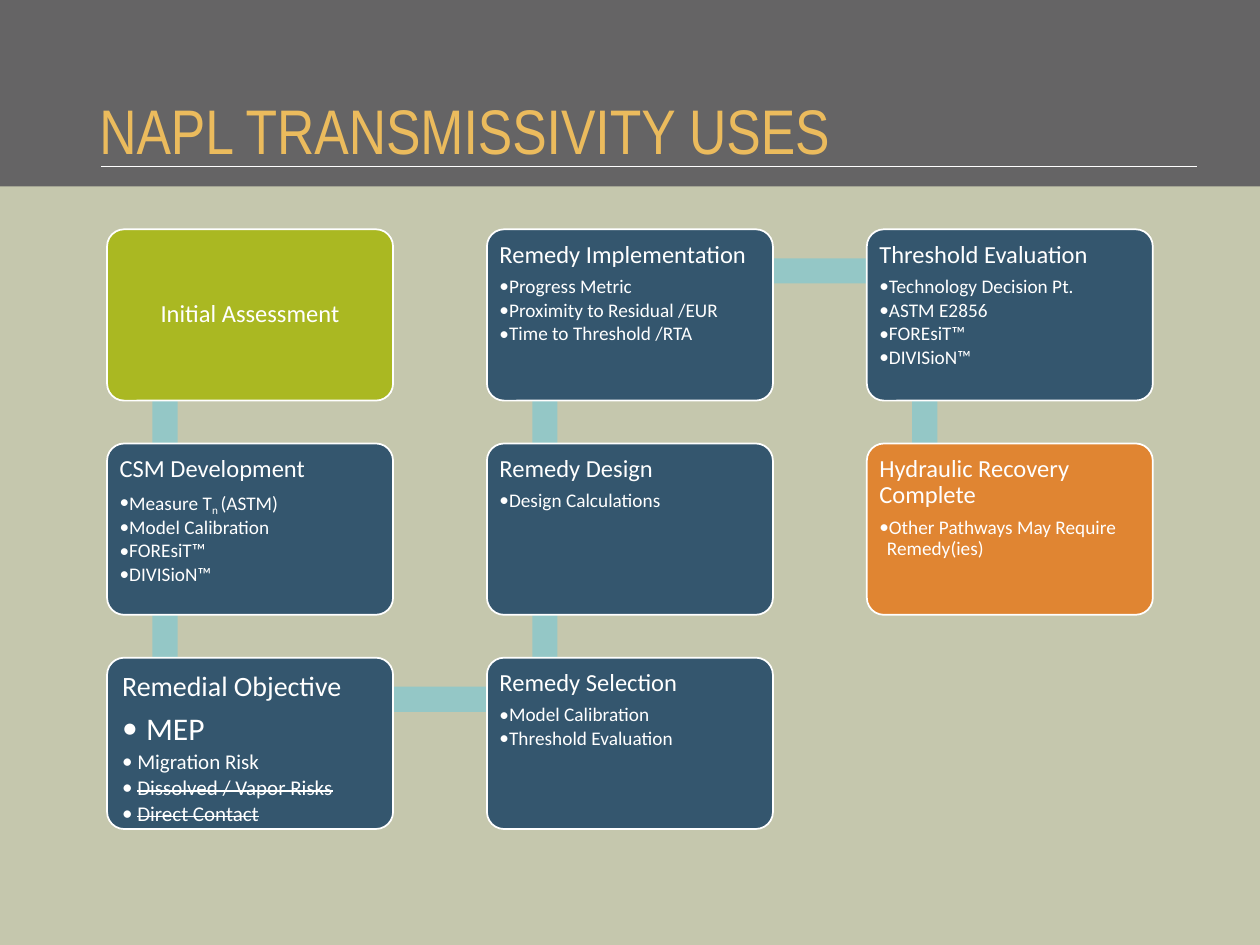
"""Build the NAPL transmissivity uses slide as a serpentine process flow."""
from dataclasses import dataclass

from lxml.etree import SubElement
from pptx import Presentation
from pptx.dml.color import RGBColor
from pptx.enum.shapes import MSO_CONNECTOR, MSO_SHAPE
from pptx.enum.text import MSO_ANCHOR, PP_ALIGN
from pptx.oxml.ns import qn
from pptx.util import Inches, Pt


@dataclass(frozen=True)
class Theme:
    background: str = "C5C7AD"
    banner: str = "656465"
    title: str = "EBBB5D"
    white: str = "FFFFFF"
    bar: str = "94C7C6"
    start: str = "AAB822"
    step: str = "34566E"
    finish: str = "E08532"
    title_font: str = "Arial Narrow"
    body_font: str = "Calibri"
    title_size: int = 36
    heading_size: int = 14
    large_heading_size: int = 16
    bullet_size: int = 11
    medium_bullet_size: int = 12
    large_bullet_size: int = 18


THEME = Theme()
TITLE = "NAPL TRANSMISSIVITY USES"
MEDIUM = {"size": THEME.medium_bullet_size, "indent": 0.12}
STRUCK = {**MEDIUM, "strike": True}
STEPS = [
    {"cell": (0, 0), "heading": "Initial Assessment", "fill": THEME.start},
    {"cell": (0, 1), "heading": "CSM Development", "bullets": [
        ("Measure T", {"tail": [("n ", -25000), ("(ASTM)", 0)]}),
        "Model Calibration", "FOREsiT™", "DIVISioN™"]},
    {"cell": (0, 2), "heading": "Remedial Objective",
     "size": THEME.large_heading_size, "inset": 0.08, "bullets": [
         ("MEP", {"size": THEME.large_bullet_size, "indent": 0.19}),
         ("Migration Risk", MEDIUM),
         ("Dissolved / Vapor Risks", STRUCK),
         ("Direct Contact", STRUCK)]},
    {"cell": (1, 2), "heading": "Remedy Selection",
     "bullets": ["Model Calibration", "Threshold Evaluation"]},
    {"cell": (1, 1), "heading": "Remedy Design", "bullets": ["Design Calculations"]},
    {"cell": (1, 0), "heading": "Remedy Implementation", "bullets": [
        "Progress Metric", "Proximity to Residual /EUR", "Time to Threshold /RTA"]},
    {"cell": (2, 0), "heading": "Threshold Evaluation", "bullets": [
        "Technology Decision Pt.", "ASTM E2856", "FOREsiT™", "DIVISioN™"]},
    {"cell": (2, 1), "heading": "Hydraulic Recovery Complete", "fill": THEME.finish,
     "bullets": ["Other Pathways May Require Remedy(ies)"]},
]

GRID_LEFT, GRID_TOP = 0.85, 1.82
COLUMN_PITCH, ROW_PITCH = (6.88 - GRID_LEFT) / 2, 1.7
BOX_WIDTH, BOX_HEIGHT = 2.27, 1.36
BAR_THICKNESS, BAR_OFFSET_X, BAR_OFFSET_Y = 0.2, 0.36, 0.23


def color(value):
    """Return an RGB colour from its hex form."""
    return RGBColor.from_string(value)


def add_block(slide, preset, bounds, fill, line=None):
    """Add a filled preset shape without shadow."""
    shape = slide.shapes.add_shape(preset, *map(Inches, bounds))
    shape.shadow.inherit = False
    shape.fill.solid()
    shape.fill.fore_color.rgb = color(fill)
    if line:
        shape.line.color.rgb = color(line)
        shape.line.width = Pt(1)
    else:
        shape.line.fill.background()
    return shape


def write(paragraph, text, size, font=THEME.body_font, fill=THEME.white, align=PP_ALIGN.LEFT,
          after=0, indent=0, strike=False, tail=()):
    """Write one formatted paragraph, bulleted when it has an indent."""
    properties = paragraph._p.get_or_add_pPr()
    if indent:
        properties.set("marL", str(Inches(indent)))
        properties.set("indent", str(-Inches(indent)))
        SubElement(properties, qn("a:buFont")).set("typeface", font)
        SubElement(properties, qn("a:buChar")).set("char", "•")
    paragraph.alignment = align
    paragraph.line_spacing = 0.9
    paragraph.space_after = Pt(after)
    paragraph.font.size = Pt(size)
    for words, baseline in [(text, 0), *tail]:
        run = paragraph.add_run()
        run.text = words
        run.font.name = font
        run.font.size = Pt(size)
        run.font.color.rgb = color(fill)
        if strike:
            run.font._element.set("strike", "sngStrike")
        if baseline:
            run.font._element.set("baseline", str(baseline))
    SubElement(paragraph._p, qn("a:endParaRPr")).set("sz", str(size * 100))


def prepare_frame(shape, anchor, inset=None):
    """Set wrapping, anchor and margins of a shape's text frame."""
    frame = shape.text_frame
    frame.word_wrap = True
    frame.vertical_anchor = anchor
    if inset is not None:
        frame.margin_left = frame.margin_right = Inches(inset)
        frame.margin_top = frame.margin_bottom = Inches(inset)
    return frame


def cell_origin(cell):
    """Return the top left corner of a grid cell."""
    column, row = cell
    return GRID_LEFT + column * COLUMN_PITCH, GRID_TOP + row * ROW_PITCH


def add_header(slide):
    """Add the banner, its rule and the title."""
    add_block(slide, MSO_SHAPE.RECTANGLE, (0, -0.02, 10, 1.5), THEME.banner)
    rule = slide.shapes.add_connector(
        MSO_CONNECTOR.STRAIGHT, Inches(0.8), Inches(1.32), Inches(9.5), Inches(1.32))
    rule.line.color.rgb = color(THEME.white)
    rule.line.width = Pt(0.75)
    SubElement(rule._element.spPr, qn("a:effectLst"))
    title = slide.shapes.add_textbox(*map(Inches, (0.69, 0.7, 8.62, 0.73)))
    frame = prepare_frame(title, MSO_ANCHOR.MIDDLE)
    write(frame.paragraphs[0], TITLE, THEME.title_size, font=THEME.title_font, fill=THEME.title)


def add_bar(slide, start, end):
    """Add the bar that links two neighbouring steps."""
    (left, top), (end_left, end_top) = sorted((cell_origin(start), cell_origin(end)))
    if start[0] == end[0]:
        bounds = (left + BAR_OFFSET_X, top + BOX_HEIGHT / 2,
                  BAR_THICKNESS, end_top - top)
    else:
        bounds = (left + BOX_WIDTH / 2, top + BAR_OFFSET_Y,
                  end_left - left, BAR_THICKNESS)
    add_block(slide, MSO_SHAPE.RECTANGLE, bounds, THEME.bar)


def add_step(slide, step):
    """Add one step box with its heading and bullets."""
    bounds = (*cell_origin(step["cell"]), BOX_WIDTH, BOX_HEIGHT)
    box = add_block(slide, MSO_SHAPE.ROUNDED_RECTANGLE, bounds,
                    step.get("fill", THEME.step), THEME.white)
    box.adjustments[0] = 0.1
    bullets = step.get("bullets", [])
    frame = prepare_frame(box, MSO_ANCHOR.TOP if bullets else MSO_ANCHOR.MIDDLE,
                          step.get("inset", 0.06))
    size = step.get("size", THEME.heading_size)
    write(frame.paragraphs[0], step["heading"], size, after=0.35 * size if bullets else 0,
          align=PP_ALIGN.LEFT if bullets else PP_ALIGN.CENTER)
    for bullet in bullets:
        text, changes = (bullet, {}) if isinstance(bullet, str) else bullet
        style = {"size": THEME.bullet_size, "indent": 0.06, **changes}
        write(frame.add_paragraph(), text, after=0.15 * style["size"], **style)


def main():
    """Build and save the presentation."""
    presentation = Presentation()
    presentation.slide_width, presentation.slide_height = Inches(10), Inches(7.5)
    slide = presentation.slides.add_slide(presentation.slide_layouts[6])
    slide.background.fill.solid()
    slide.background.fill.fore_color.rgb = color(THEME.background)
    add_header(slide)
    for step, following in zip(STEPS, STEPS[1:]):
        add_bar(slide, step["cell"], following["cell"])
    for step in STEPS:
        add_step(slide, step)
    presentation.save("out.pptx")


if __name__ == "__main__":
    main()
